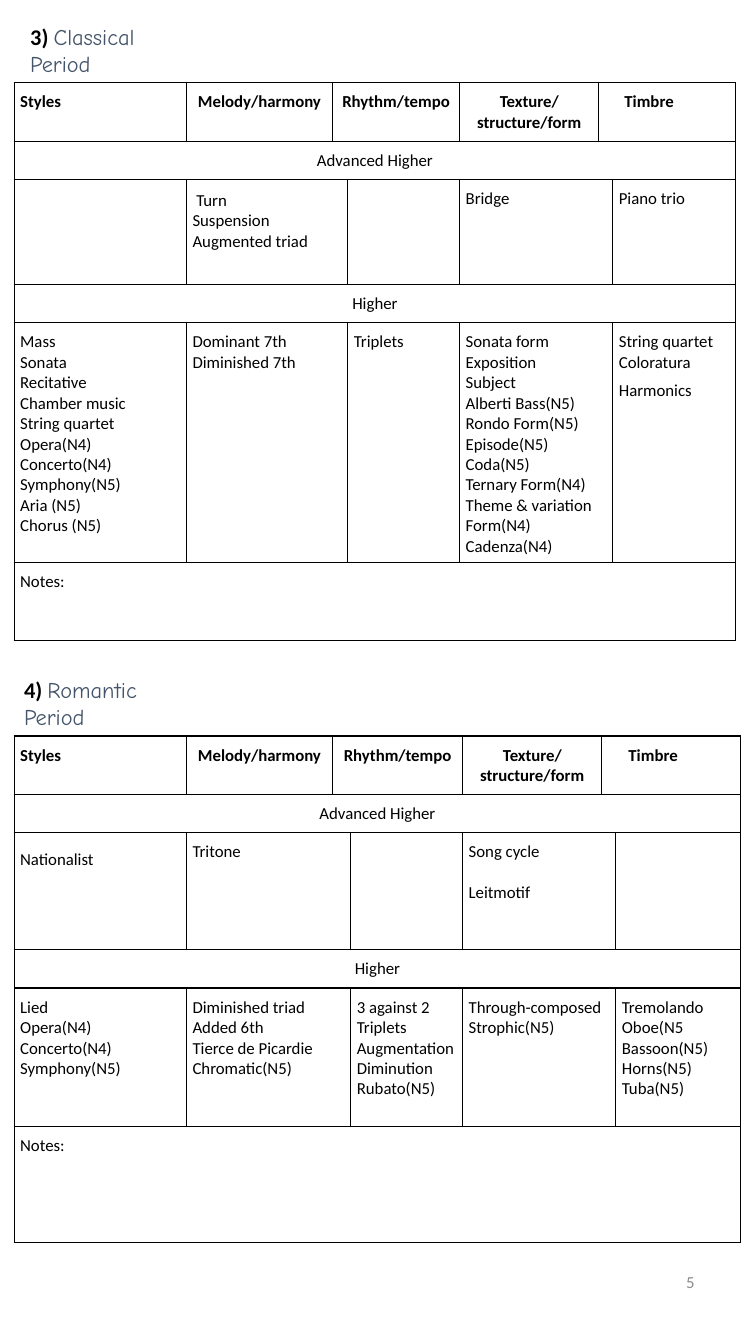
from lxml import etree
from pptx import Presentation
from pptx.dml.color import RGBColor
from pptx.enum import text
from pptx.oxml import ns
from pptx.util import Inches, Pt

COLORS = {"ink": "000000", "period": "44546A", "number": "8C8C8C", "paper": "FFFFFF"}
HEADER_SPANS = [(0, 0), (1, 1), (2, 3), (4, 4), (5, 6)]
BODY_SPANS = [(0, 0), (1, 2), (3, 3), (4, 5), (6, 6)]
FULL_SPAN = [(0, 6)]
HEADERS = ["Styles", "Melody/harmony", "Rhythm/tempo", "Texture/structure/form", "Timbre"]
SPACE_BEFORE = {"Leitmotif": 14.6, "Harmonics": 6}
TOP_MARGINS = {" Turn\nSuspension\nAugmented triad": 0.11, "Nationalist": 0.17}
RIGHT_MARGINS = {"Timbre": 0.42}

CLASSICAL_ADVANCED = ["", " Turn\nSuspension\nAugmented triad", "", "Bridge", "Piano trio"]
CLASSICAL_HIGHER = [
    "Mass\nSonata\nRecitative\nChamber music\nString quartet\nOpera(N4)\n"
    "Concerto(N4)\nSymphony(N5)\nAria (N5)\nChorus (N5)",
    "Dominant 7th\nDiminished 7th",
    "Triplets",
    "Sonata form\nExposition\nSubject\nAlberti Bass(N5)\nRondo Form(N5)\nEpisode(N5)\n"
    "Coda(N5)\nTernary Form(N4)\nTheme & variation Form(N4)\nCadenza(N4)",
    "String quartet\nColoratura\nHarmonics",
]
ROMANTIC_ADVANCED = ["Nationalist", "Tritone", "", "Song cycle\nLeitmotif", ""]
ROMANTIC_HIGHER = [
    "Lied\nOpera(N4)\nConcerto(N4)\nSymphony(N5)",
    "Diminished triad\nAdded 6th\nTierce de Picardie\nChromatic(N5)",
    "3 against 2\nTriplets\nAugmentation\nDiminution\nRubato(N5)",
    "Through-composed\nStrophic(N5)",
    "Tremolando\nOboe(N5\nBassoon(N5)\nHorns(N5)\nTuba(N5)",
]


def add_run(p, content, size=12, font="Calibri", color="ink", bold=False):
    r = p.add_run()
    r.text = content
    r.font.size = Pt(size)
    r.font.name = font
    r.font.bold = bold
    r.font.color.rgb = RGBColor.from_string(COLORS[color])


class Page:
    def __init__(self, prs):
        self.s = prs.slides.add_slide(prs.slide_layouts[5])

    def textbox(self, left, top, width, height):
        return self.s.shapes.add_textbox(Inches(left), Inches(top), Inches(width), Inches(height))

    def heading(self, sp, number, period, left, top, width):
        sp.left, sp.top = Inches(left), Inches(top)
        sp.width, sp.height = Inches(width), Inches(0.64)
        tf = sp.text_frame
        tf.word_wrap = True
        tf.auto_size = text.MSO_AUTO_SIZE.NONE
        tf.vertical_anchor = text.MSO_ANCHOR.TOP
        p = tf.paragraphs[0]
        p.alignment = text.PP_ALIGN.LEFT
        add_run(p, number, size=16, bold=True)
        add_run(p, period, size=16, font="Comic Neue", color="period")

    def page_number(self, number):
        tf = self.textbox(5.3, 12.36, 1.69, 0.71).text_frame
        tf.word_wrap = True
        tf.vertical_anchor = text.MSO_ANCHOR.MIDDLE
        p = tf.paragraphs[0]
        p.alignment = text.PP_ALIGN.RIGHT
        add_run(p, number, color="number")

    def style_cell(self, cell):
        tc_pr = cell._tc.get_or_add_tcPr()
        for side in ("lnL", "lnR", "lnT", "lnB"):
            ln = etree.SubElement(tc_pr, ns.qn(f"a:{side}"), w=str(Pt(1)))
            fill = etree.SubElement(ln, ns.qn("a:solidFill"))
            etree.SubElement(fill, ns.qn("a:srgbClr"), val=COLORS["ink"])
        cell.fill.solid()
        cell.fill.fore_color.rgb = RGBColor.from_string(COLORS["paper"])

    def fill_cell(self, cell, content, centered, bold):
        cell.margin_left = Inches(0.06)
        cell.margin_right = Inches(RIGHT_MARGINS.get(content, 0.06))
        cell.margin_top = Inches(TOP_MARGINS.get(content, 0.09))
        cell.margin_bottom = Inches(0.05)
        tf = cell.text_frame
        for i, line in enumerate(content.split("\n")):
            p = tf.add_paragraph() if i else tf.paragraphs[0]
            p.alignment = text.PP_ALIGN.CENTER if centered else text.PP_ALIGN.LEFT
            if line in SPACE_BEFORE:
                p.space_before = Pt(SPACE_BEFORE[line])
            if line:
                add_run(p, line, bold=bold)

    def concept_table(self, top, widths, heights, advanced, higher):
        rows = [
            (HEADER_SPANS, HEADERS),
            (FULL_SPAN, ["Advanced Higher"]),
            (BODY_SPANS, advanced),
            (FULL_SPAN, ["Higher"]),
            (BODY_SPANS, higher),
            (FULL_SPAN, ["Notes:"]),
        ]
        table = self.s.shapes.add_table(
            len(rows), len(widths), Inches(0.14), Inches(top),
            Inches(sum(widths)), Inches(sum(heights))).table
        table.first_row = table.horz_banding = False
        for col, width in zip(table.columns, widths):
            col.width = Inches(width)
        for row, height in zip(table.rows, heights):
            row.height = Inches(height)
        for cell in table.iter_cells():
            self.style_cell(cell)
        for i, (spans, contents) in enumerate(rows):
            for (first, last), content in zip(spans, contents):
                cell = table.cell(i, first)
                if last > first:
                    cell.merge(table.cell(i, last))
                centered = i in (0, 1, 3) and content != "Styles"
                self.fill_cell(cell, content, centered, bold=i == 0)


def main():
    prs = Presentation()
    prs.slide_width, prs.slide_height = Inches(7.5), Inches(13.33)
    page = Page(prs)
    page.heading(page.s.shapes.title, "3) ", "Classical Period", 0.2, 0.18, 1.87)
    page.page_number("5")
    page.concept_table(0.82, [1.71, 1.45, 0.15, 1.11, 1.38, 0.14, 1.22],
                       [0.58, 0.38, 1.04, 0.38, 2.38, 0.77],
                       CLASSICAL_ADVANCED, CLASSICAL_HIGHER)
    page.heading(page.textbox(0.14, 6.66, 1.95, 0.64), "4) ", "Romantic Period", 0.14, 6.66, 1.95)
    page.concept_table(7.3, [1.71, 1.45, 0.18, 1.11, 1.38, 0.14, 1.24],
                       [0.58, 0.38, 1.16, 0.38, 1.37, 1.15],
                       ROMANTIC_ADVANCED, ROMANTIC_HIGHER)
    prs.save("out.pptx")


if __name__ == "__main__":
    main()
